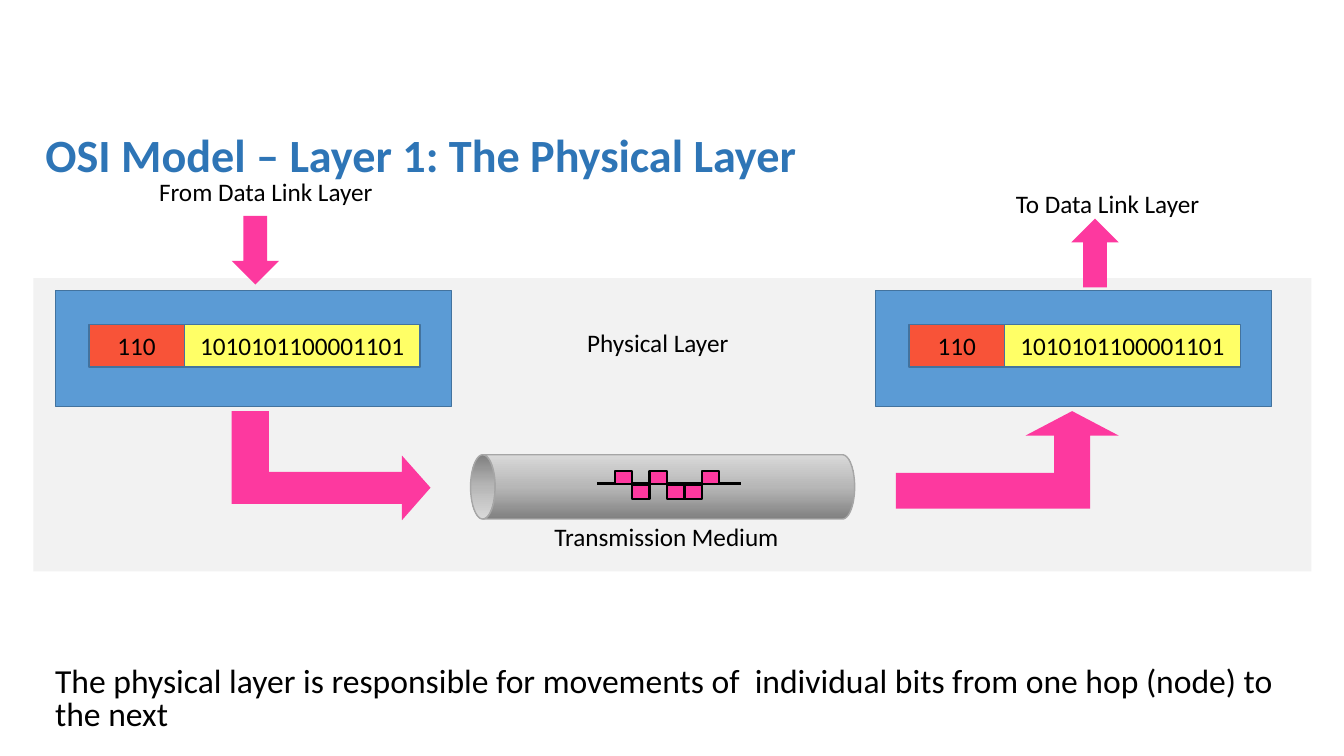
import copy
import math

from pptx import Presentation
from pptx.dml.color import RGBColor
from pptx.enum import shapes, text
from pptx.oxml.ns import qn
from pptx.util import Cm, Pt
from lxml import etree

BLACK = RGBColor(0x00, 0x00, 0x00)
TITLE_BLUE = RGBColor(0x2E, 0x75, 0xB6)
BAND_GREY = RGBColor(0xF2, 0xF2, 0xF2)
NODE_BLUE = RGBColor(0x5B, 0x9B, 0xD5)
NODE_EDGE = RGBColor(0x43, 0x73, 0x9E)
YELLOW = RGBColor(0xFF, 0xFF, 0x66)
RED = RGBColor(0xF8, 0x53, 0x38)
PINK = RGBColor(0xFD, 0x39, 0x9F)
PIPE_EDGE = RGBColor(0xA6, 0xA6, 0xA6)
PIPE_GREYS = [RGBColor(0x80, 0x80, 0x80), RGBColor(0xB7, 0xB7, 0xB7),
              RGBColor(0xD9, 0xD9, 0xD9)]
FONT = "Calibri"
SHAPE = shapes.MSO_SHAPE

prs = Presentation()
prs.slide_width, prs.slide_height = Cm(33.87), Cm(19.05)
slide = prs.slides.add_slide(prs.slide_layouts[5])


def add_block(kind, left, top, width, height, color, edge=None, edge_width=1):
    block = slide.shapes.add_shape(kind, Cm(left), Cm(top), Cm(width), Cm(height))
    block.shadow.inherit = False
    block.fill.solid()
    block.fill.fore_color.rgb = color
    if edge is None:
        block.line.fill.background()
    else:
        block.line.color.rgb = edge
        block.line.width = Pt(edge_width)
    return block


def add_outline(points):
    """Close a polygon through points given in centimetres."""
    corners = [(Cm(x), Cm(y)) for x, y in points]
    builder = slide.shapes.build_freeform(*corners[0])
    builder.add_line_segments(corners[1:], close=True)
    outline = builder.convert_to_shape()
    outline.shadow.inherit = False
    return outline


# Background band, title and summary
add_block(SHAPE.RECTANGLE, 0.84, 7.01, 32.21, 7.39, BAND_GREY)

title = slide.shapes.title
title.left, title.top, title.width, title.height = Cm(0.89), Cm(2.72), Cm(32.21), Cm(2.51)
title.text_frame.text = "OSI Model – Layer 1: The Physical Layer"
title.text_frame.vertical_anchor = text.MSO_ANCHOR.MIDDLE
heading = title.text_frame.paragraphs[0]
heading.alignment = text.PP_ALIGN.LEFT
heading.line_spacing = 0.9
heading.font.name, heading.font.size, heading.font.bold = FONT, Pt(33), True
heading.font.color.rgb = TITLE_BLUE

summary_box = slide.shapes.add_textbox(Cm(1.14), Cm(16.71), Cm(32.21), Cm(2.08))
summary_box.text_frame.word_wrap = True
summary = summary_box.text_frame.paragraphs[0]
summary.text = ("The physical layer is responsible for movements of  individual bits "
                "from one hop (node) to the next")
summary.line_spacing = 0.8
summary.space_before = Pt(7.5)
summary.font.name, summary.font.size = FONT, Pt(24)
summary.font.color.rgb = BLACK

# Sending and receiving nodes, each with a header and a payload
for node_left in (1.4, 22.07):
    add_block(SHAPE.RECTANGLE, node_left, 7.32, 9.98, 2.92, NODE_BLUE, NODE_EDGE)
    for bits, offset, width, color in (("1010101100001101", 3.25, 5.94, YELLOW),
                                       ("110", 0.84, 2.41, RED)):
        field = add_block(SHAPE.RECTANGLE, node_left + offset, 8.18, width, 1.07,
                          color, NODE_EDGE)
        field.text_frame.word_wrap = False
        field.text_frame.vertical_anchor = text.MSO_ANCHOR.MIDDLE
        content = field.text_frame.paragraphs[0]
        content.text = bits
        content.alignment = text.PP_ALIGN.CENTER
        content.font.name, content.font.size = FONT, Pt(18)
        content.font.color.rgb = BLACK

# Transmission pipe: an elliptical mouth and a body with rounded ends
MOUTH_X, END_X, PIPE_Y = 12.17, 21.23, 12.27
RADIUS_X, RADIUS_Y = 0.31, 0.81
unit_circle = [(math.sin(math.radians(a)), -math.cos(math.radians(a)))
               for a in range(0, 360, 6)]
mouth = [(MOUTH_X + RADIUS_X * x, PIPE_Y + RADIUS_Y * y) for x, y in unit_circle]
right_end = [(END_X + RADIUS_X * x, PIPE_Y + RADIUS_Y * y) for x, y in unit_circle[:31]]
for points, angle in ((mouth, 270), (right_end + mouth[30::-1], 90)):
    pipe_part = add_outline(points)
    pipe_part.line.color.rgb = PIPE_EDGE
    pipe_part.line.width = Pt(1)
    pipe_part.fill.gradient()
    pipe_part.fill.gradient_angle = angle
    first_stop = pipe_part.element.spPr.find(".//" + qn("a:gs"))
    first_stop.addnext(copy.deepcopy(first_stop))
    for i, stop in enumerate(pipe_part.fill.gradient_stops):
        stop.color.rgb = PIPE_GREYS[i]
        stop.position = i / 2

# Signal: ones above the line, zeros below
baseline = slide.shapes.add_connector(shapes.MSO_CONNECTOR.STRAIGHT,
                                      Cm(15.04), Cm(12.19), Cm(18.67), Cm(12.19))
baseline.line.color.rgb = BLACK
baseline.line.width = Pt(2.25)
etree.SubElement(baseline.element.spPr, qn("a:effectLst"))
for i, bit in enumerate("101001"):
    add_block(SHAPE.RECTANGLE, 15.49 + 0.44 * i, 11.86 if bit == "1" else 12.23,
              0.44, 0.34, PINK, BLACK, 1.5)

# Arrows into and out of the pipe
into_pipe = add_outline([(5.84, 10.36), (6.78, 10.36), (6.78, 11.89), (10.13, 11.89),
                         (10.13, 11.48), (10.85, 12.29), (10.13, 13.11),
                         (10.13, 12.7), (5.84, 12.7)])
into_pipe.fill.solid()
into_pipe.fill.fore_color.rgb = PINK
into_pipe.line.fill.background()

out_of_pipe = add_block(SHAPE.BENT_UP_ARROW, 22.58, 10.36, 5.61, 2.46, PINK)
for i, ratio in enumerate((0.368, 0.476, 0.25)):
    out_of_pipe.adjustments[i] = ratio

# Labels
for label, left, top, width in (("From Data Link Layer", 3.76, 4.32, 5.97),
                                ("To Data Link Layer", 25.35, 4.62, 5.21),
                                ("Transmission Medium", 13.72, 13.0, 6.22),
                                ("Physical Layer", 14.55, 8.13, 4.11)):
    label_box = slide.shapes.add_textbox(Cm(left), Cm(top), Cm(width), Cm(1.02))
    label_box.text_frame.word_wrap = False
    label_box.text_frame.auto_size = text.MSO_AUTO_SIZE.SHAPE_TO_FIT_TEXT
    caption = label_box.text_frame.paragraphs[0]
    caption.text = label
    caption.font.name, caption.font.size = FONT, Pt(18)
    caption.font.color.rgb = BLACK

# Arrows from and to the data link layer
add_block(SHAPE.DOWN_ARROW, 5.84, 5.44, 1.19, 1.73, PINK)
to_data_link = add_block(SHAPE.DOWN_ARROW, 27, 5.51, 1.19, 1.73, PINK)
to_data_link.rotation = 180

prs.save("out.pptx")
